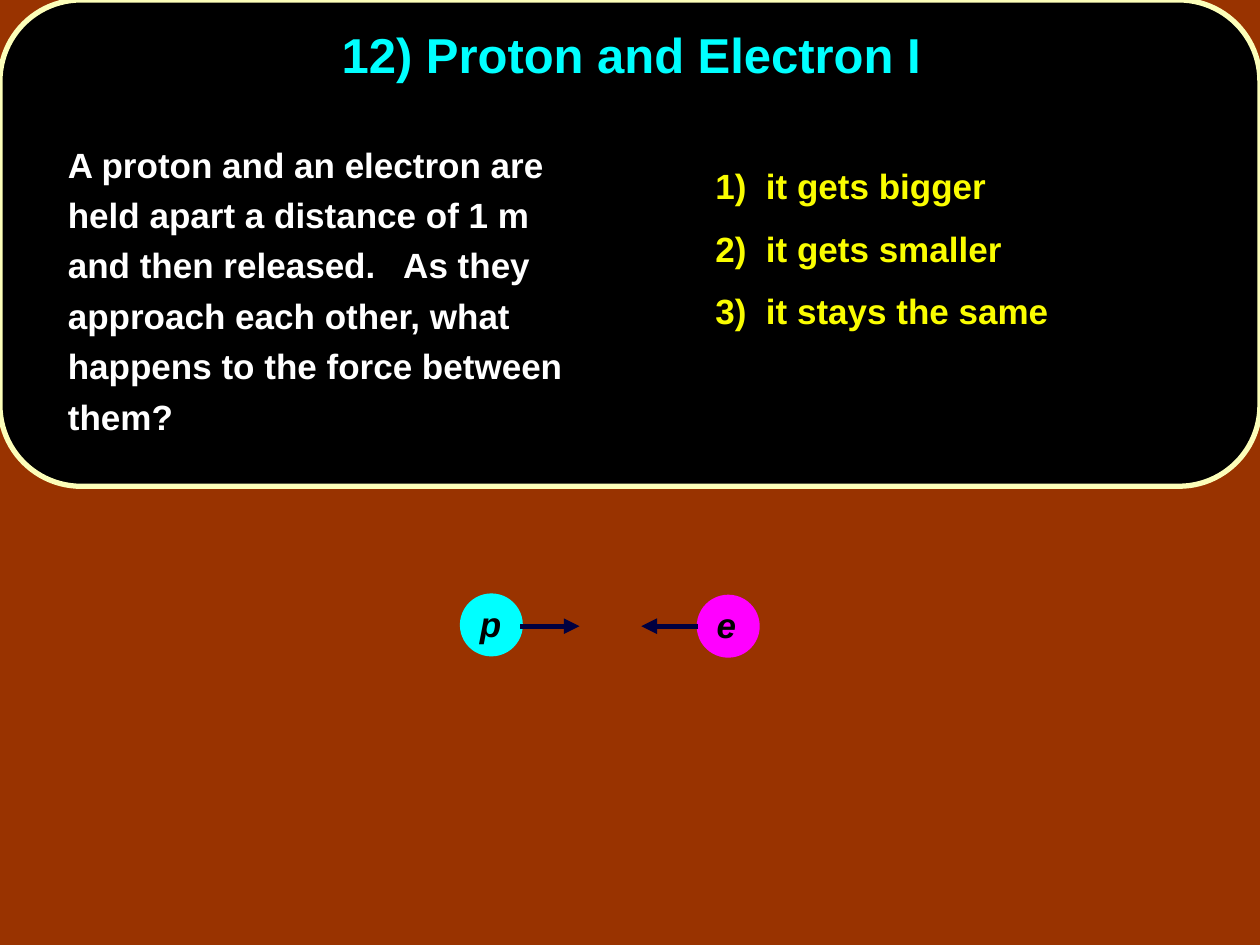
from dataclasses import dataclass

from pptx import Presentation
from pptx.dml.color import RGBColor
from pptx.enum.shapes import MSO_CONNECTOR as Connector, MSO_SHAPE as Shape
from pptx.enum.text import MSO_ANCHOR as Anchor, PP_ALIGN as Align
from pptx.oxml.ns import qn
from pptx.util import Inches, Pt
from lxml.etree import SubElement

BLACK, WHITE, CYAN, MAGENTA = "000000", "FFFFFF", "00FFFF", "FF00FF"
YELLOW, CREAM, NAVY, RUST = "FAFD00", "FCFEB9", "000040", "993300"
CIRCLE_SIZE = 0.5
ARROW_Y = 4.97


@dataclass
class Particle:
    letter: str
    color: str
    left: float
    top: float
    label_width: float
    arrow_start: float
    arrow_end: float


PARTICLES = [
    Particle("p", CYAN, 3.65, 4.71, 0.37, 4.13, 4.6),
    Particle("e", MAGENTA, 5.53, 4.72, 0.36, 5.54, 5.09),
]
QUESTION = (
    "A proton and an electron are held apart a distance of 1 m and then released.   "
    "As they approach each other, what happens to the force between them?"
)
ANSWERS = ["1)  it gets bigger", "2)  it gets smaller", "3)  it stays the same"]


def paint(color_owner, color: str) -> None:
    color_owner.solid()
    color_owner.fore_color.rgb = RGBColor.from_string(color)


def style_font(para, size: float, color: str, italic: bool = False) -> None:
    for span in para.runs:
        font = span.font
        font.name, font.size = "Arial", Pt(size)
        font.bold, font.italic = True, italic
        font.color.rgb = RGBColor.from_string(color)


def add_shape(page, kind, left: float, top: float, width: float, height: float, fill: str):
    shape = page.shapes.add_shape(kind, *map(Inches, (left, top, width, height)))
    shape.shadow.inherit = False
    paint(shape.fill, fill)
    shape.line.fill.background()
    return shape


def add_text(page, left: float, top: float, width: float, height: float,
             lines: list[str], color: str, indent: float, hanging: float) -> None:
    box = page.shapes.add_textbox(*map(Inches, (left, top, width, height)))
    frame = box.text_frame
    frame.word_wrap = True
    frame.text = "\n".join(lines)
    for index, para in enumerate(frame.paragraphs):
        properties = para._p.get_or_add_pPr()
        properties.set("marL", str(Inches(indent)))
        properties.set("indent", str(-Inches(hanging)))
        para.line_spacing = 1.2
        if index:
            para.space_before = Pt(7)
        style_font(para, 20, color)


def add_arrow(page, start: float, end: float, y: float) -> None:
    arrow = page.shapes.add_connector(
        Connector.STRAIGHT, Inches(start), Inches(y), Inches(end), Inches(y))
    arrow.line.width = Pt(3)
    paint(arrow.line.fill, NAVY)
    properties = arrow.element.spPr
    SubElement(properties.find(qn("a:ln")), qn("a:tailEnd"), type="triangle")
    SubElement(properties, qn("a:effectLst"))


def add_particle(page, particle: Particle) -> None:
    add_shape(page, Shape.OVAL, particle.left, particle.top,
              CIRCLE_SIZE, CIRCLE_SIZE, particle.color)
    label = page.shapes.add_textbox(
        Inches(particle.left + 0.06), Inches(particle.top + 0.02),
        Inches(particle.label_width), Inches(0.43))
    label.text_frame.word_wrap = False
    label.text_frame.text = particle.letter
    style_font(label.text_frame.paragraphs[0], 20, BLACK, italic=True)


def main() -> None:
    deck = Presentation()
    deck.slide_width, deck.slide_height = Inches(10), Inches(7.5)
    page = deck.slides.add_slide(deck.slide_layouts[5])
    paint(page.background.fill, RUST)

    # Question panel
    panel = add_shape(page, Shape.ROUNDED_RECTANGLE, 0, 0, 10, 3.86, BLACK)
    panel.line.width = Pt(3)
    paint(panel.line.fill, CREAM)
    add_text(page, 0, 1.02, 4.85, 2.59, [QUESTION], WHITE, 0.44, 0)
    add_text(page, 5.58, 1.19, 4.16, 1.94, ANSWERS, YELLOW, 0.44, 0.44)

    # Attracting particles
    for particle in PARTICLES:
        add_particle(page, particle)
    for particle in PARTICLES:
        add_arrow(page, particle.arrow_start, particle.arrow_end, ARROW_Y)

    # Title, brought in front of the panel
    title = page.shapes.title
    title.left, title.top = Inches(1.02), Inches(0)
    title.width, title.height = Inches(7.98), Inches(0.92)
    title.text_frame.text = "12) Proton and Electron I"
    title.text_frame.vertical_anchor = Anchor.MIDDLE
    heading = title.text_frame.paragraphs[0]
    heading.alignment = Align.CENTER
    heading.line_spacing = 0.9
    style_font(heading, 28, CYAN)
    title.element.getparent().append(title.element)

    deck.save("out.pptx")


if __name__ == "__main__":
    main()
